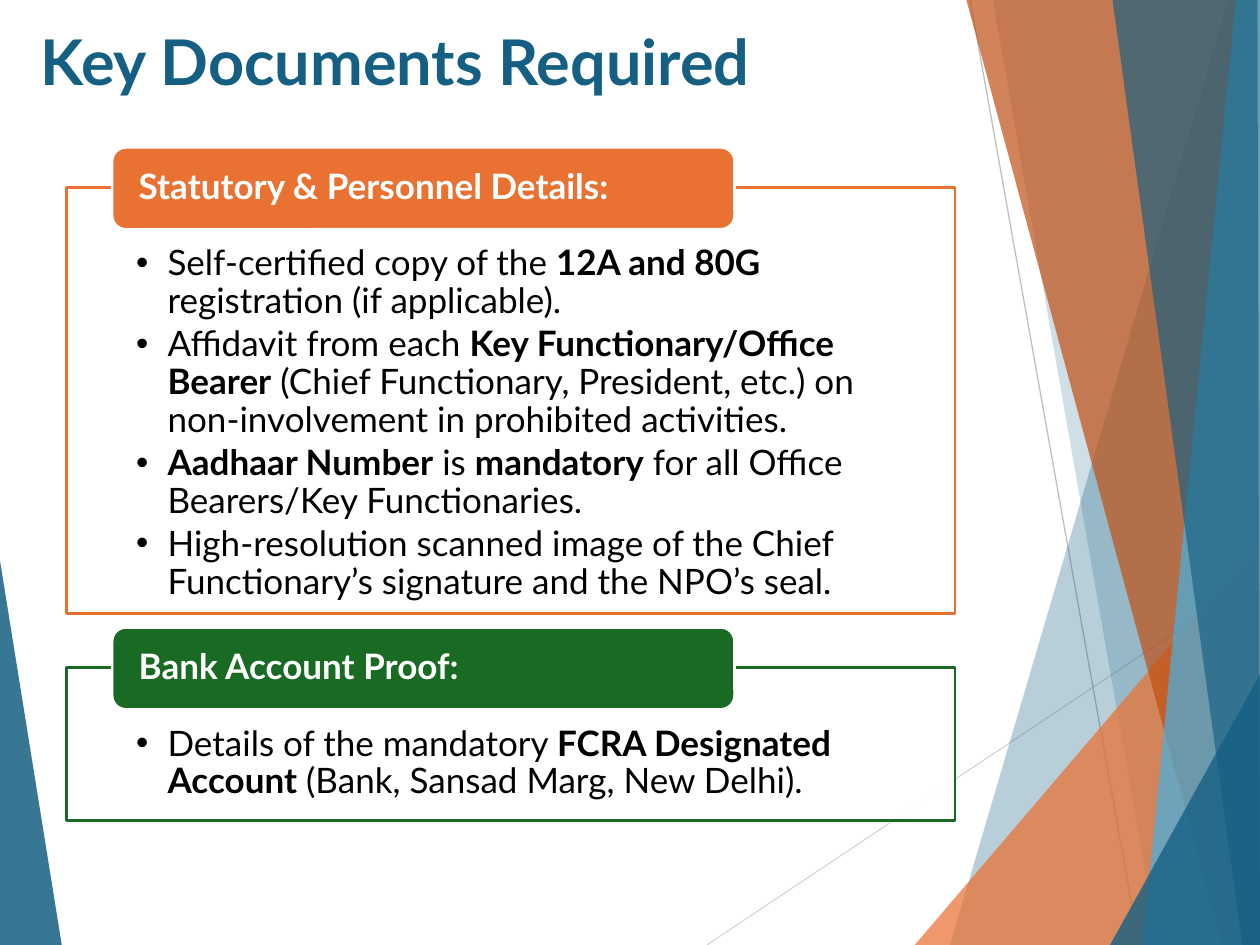
from dataclasses import dataclass

import pptx
import pptx.dml.color
import pptx.enum.shapes
import pptx.enum.text
import pptx.oxml
import pptx.oxml.ns
import pptx.util

Inches = pptx.util.Inches
Pt = pptx.util.Pt
Anchor = pptx.enum.text.MSO_ANCHOR
Kind = pptx.enum.shapes.MSO_SHAPE
NS = pptx.oxml.ns.nsdecls("a")


@dataclass
class Theme:
    font: str = "Lato"
    head: int = 36
    body: int = 20
    blue: str = "156082"
    orange: str = "E97132"
    rust: str = "C04F15"
    sky: str = "46B1E1"
    green: str = "196B24"
    white: str = "FFFFFF"
    black: str = "000000"
    pale: str = "D9D9D9"
    grey: str = "BFBFBF"


theme = Theme()


def paint(shape, color, alpha=100, edge=None):
    """Fill a shape, with opacity in percent, and outline it if edge is given."""
    shape.fill.solid()
    shape.fill.fore_color.rgb = pptx.dml.color.RGBColor.from_string(color)
    if alpha < 100:
        tint = shape.element.spPr.find(".//" + pptx.oxml.ns.qn("a:srgbClr"))
        tint.append(pptx.oxml.parse_xml(f'<a:alpha {NS} val="{alpha * 1000}"/>'))
    if edge:
        shape.line.color.rgb = pptx.dml.color.RGBColor.from_string(edge)
        shape.line.width = Pt(1.5)
    else:
        shape.line.fill.background()


def write(shape, text, size=theme.body, color=theme.black, bold=False,
          bullet=False, inset=(0.1, 0.05, 0.1, 0.05), anchor=Anchor.TOP,
          spacing=0.9, after=0):
    """Write one paragraph per line of text; **marks** switch bold."""
    frame = shape.text_frame
    frame.word_wrap = True
    frame.auto_size = pptx.enum.text.MSO_AUTO_SIZE.NONE
    frame.vertical_anchor = anchor
    (frame.margin_left, frame.margin_top,
     frame.margin_right, frame.margin_bottom) = map(Inches, inset)
    for row, line in enumerate(text.split("\n")):
        para = frame.paragraphs[0] if row == 0 else frame.add_paragraph()
        para.alignment = pptx.enum.text.PP_ALIGN.LEFT
        para.line_spacing = spacing
        para.space_before = Pt(0)
        para.space_after = Pt(after)
        if bullet:
            props = para._p.get_or_add_pPr()
            props.set("marL", str(Inches(0.25)))
            props.set("indent", str(Inches(-0.25)))
            props.append(pptx.oxml.parse_xml(f'<a:buChar {NS} char="•"/>'))
        for part, words in enumerate(line.split("**")):
            if words:
                run = para.add_run()
                run.text = words
                run.font.name = theme.font
                run.font.size = Pt(size)
                run.font.bold = bold or part % 2 == 1
                run.font.color.rgb = pptx.dml.color.RGBColor.from_string(color)


W, H = 10, 7.5
deck = pptx.Presentation()
deck.slide_width, deck.slide_height = Inches(W), Inches(H)
slide = deck.slides.add_slide(deck.slide_layouts[3])
shapes = slide.shapes
title, *lists = list(slide.placeholders)

# Backdrop: two thin lines, then translucent facets
rays = [
    (5.61, H, W, 4.57, theme.pale),
    (7.7, 0, 9.04, H, theme.grey),
]
for *ends, color in rays:
    ray = shapes.add_connector(pptx.enum.shapes.MSO_CONNECTOR.STRAIGHT,
                               *map(Inches, ends))
    ray.line.color.rgb = pptx.dml.color.RGBColor.from_string(color)
    ray.line.width = Pt(0.75)
    ray.element.spPr.append(pptx.oxml.parse_xml(f"<a:effectLst {NS}/>"))

facets = [
    (theme.blue, 85, [(0, 4.45), (0.49, H), (0, H)]),
    (theme.blue, 30, [(9.75, 0), (7.54, H), (W, H), (W, 0)]),
    (theme.blue, 20, [(7.88, 0), (9.19, H), (W, H), (W, 0)]),
    (theme.orange, 72, [(7.26, H), (W, 4.29), (W, H)]),
    (theme.rust, 70, [(7.67, 0), (9.7, H), (W, H), (W, 0)]),
    (theme.sky, 70, [(9.81, 0), (9.07, H), (W, H), (W, 0)]),
    (theme.blue, 65, [(8.83, 0), (9.86, H), (W, H), (9.98, 0)]),
    (theme.blue, 80, [(8.81, H), (W, 5.35), (W, H)]),
]
for color, alpha, points in facets:
    start, *rest = [(Inches(x), Inches(y)) for x, y in points]
    pen = shapes.build_freeform(*start)
    pen.add_line_segments(rest, close=True)
    facet = pen.convert_to_shape()
    facet.shadow.inherit = False
    paint(facet, color, alpha)

# Placeholders go in front of the backdrop
tree = title.element.getparent()
for holder in (title, *lists):
    tree.append(holder.element)

title.left, title.top = Inches(0.22), Inches(0.13)
title.width, title.height = Inches(7.05), Inches(1.02)
write(title, "Key Documents Required", size=theme.head, color=theme.blue,
      bold=True, spacing=1.0)

panels = [
    (1.49, 3.38, theme.orange, "Statutory & Personnel Details:",
     "Self-certified copy of the **12A and 80G** registration (if applicable).\n"
     "Affidavit from each **Key Functionary/Office Bearer** (Chief Functionary, "
     "President, etc.) on non-involvement in prohibited activities.\n"
     "**Aadhaar Number** is **mandatory** for all Office Bearers/Key Functionaries.\n"
     "High-resolution scanned image of the Chief Functionary’s signature "
     "and the NPO’s seal."),
    (5.3, 1.21, theme.green, "Bank Account Proof:",
     "Details of the mandatory **FCRA Designated Account** "
     "(Bank, Sansad Marg, New Delhi)."),
]
for panel, (top, height, color, label, items) in zip(lists, panels):
    panel.left, panel.top = Inches(0.53), Inches(top)
    panel.width, panel.height = Inches(7.05), Inches(height)
    paint(panel, theme.white, 90, edge=color)
    write(panel, items, bullet=True, inset=(0.55, 0.46, 0.55, 0.16), after=3)

    tab = shapes.add_shape(Kind.ROUNDED_RECTANGLE, Inches(0.89),
                           Inches(top - 0.32), Inches(4.94), Inches(0.65))
    tab.shadow.inherit = False
    paint(tab, color, edge=theme.white)
    write(tab, label, color=theme.white, bold=True,
          inset=(0.18, 0, 0.18, 0), anchor=Anchor.MIDDLE)

deck.save("out.pptx")
